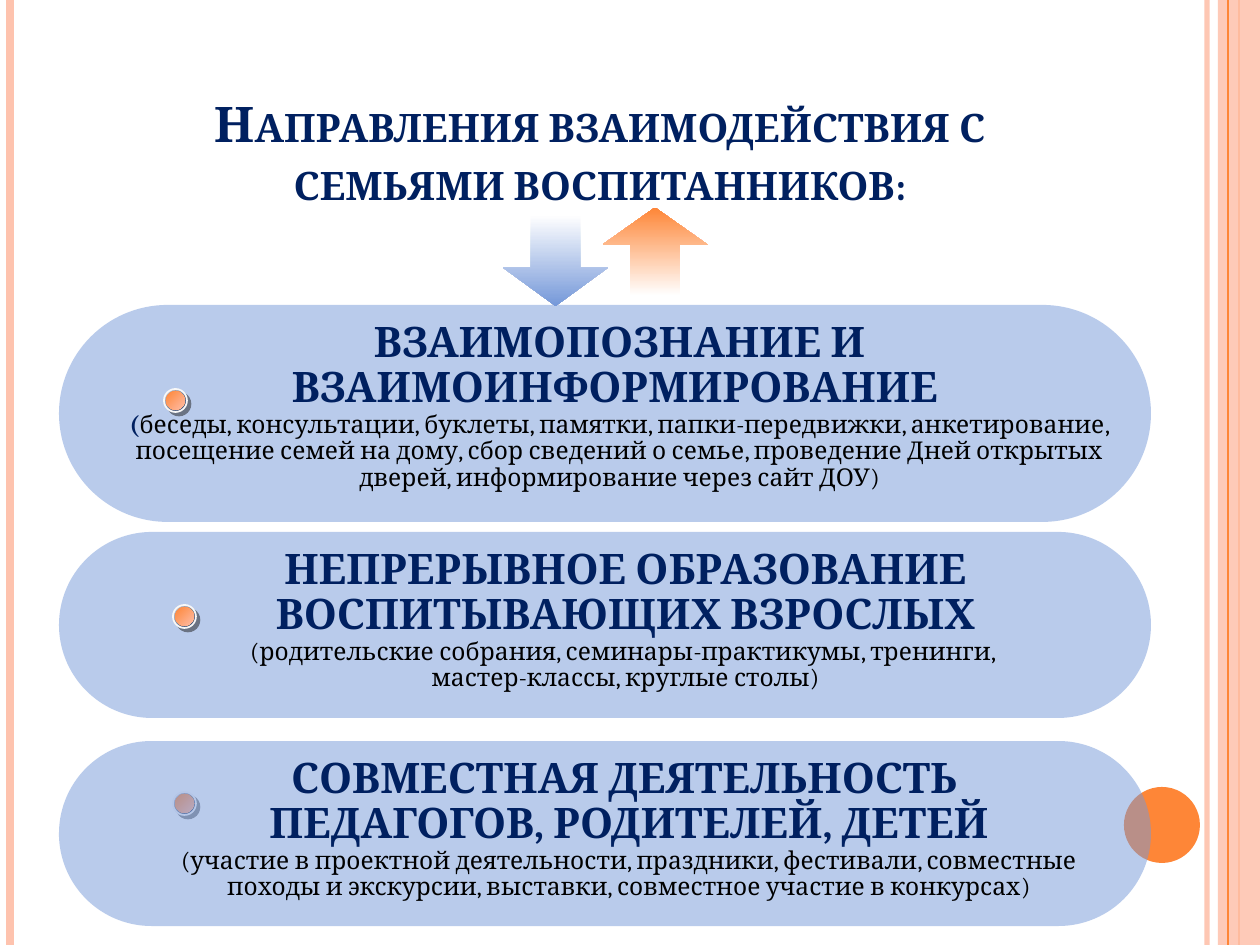
from lxml.etree import SubElement
from pptx import Presentation
from pptx.dml.color import RGBColor
from pptx.enum.shapes import MSO_CONNECTOR, MSO_SHAPE
from pptx.enum.text import MSO_ANCHOR, PP_ALIGN
from pptx.oxml.ns import qn
from pptx.util import Pt

SCALE = 914400 / 126
WIDTH, HEIGHT = 1260, 945
FONT = "Cambria"
NAVY, BLACK, BLUE, ORANGE, PEACH = "002060", "000000", "7598D9", "FE8637", "FEC3AE"

PANELS = [
    {"box": (59, 305, 1092, 217), "wording": (39, 10, 1043, 184), "bead": (105, 84), "bead_behind": False,
     "paragraphs": [
         [("ВЗАИМОПОЗНАНИЕ И ВЗАИМОИНФОРМИРОВАНИЕ ", 24, NAVY, True)],
         [("(", 14, NAVY, True),
          ("беседы, консультации, буклеты, памятки, папки-передвижки, анкетирование, "
           "посещение семей на дому, сбор сведений о семье, проведение Дней открытых дверей, "
           "информирование через сайт ДОУ)", 14, BLACK, False)]]},
    {"box": (59, 532, 1092, 186), "wording": (109, 10, 915, 158), "bead": (114, 73), "bead_behind": False,
     "paragraphs": [
         [("НЕПРЕРЫВНОЕ ОБРАЗОВАНИЕ ВОСПИТЫВАЮЩИХ ВЗРОСЛЫХ", 24, NAVY, True)],
         [("(родительские собрания, семинары-практикумы, тренинги, ", 14, BLACK, False)],
         [("мастер-классы, круглые столы)", 14, BLACK, False)]]},
    {"box": (59, 741, 1092, 185), "wording": (78, 10, 984, 158), "bead": (114, 51), "bead_behind": True,
     "paragraphs": [
         [("СОВМЕСТНАЯ ДЕЯТЕЛЬНОСТЬ ", 24, NAVY, True)],
         [("ПЕДАГОГОВ, РОДИТЕЛЕЙ, ДЕТЕЙ", 24, NAVY, True)],
         [("(участие в проектной деятельности, праздники, фестивали, совместные походы "
           "и экскурсии, выставки, совместное участие в конкурсах)", 14, BLACK, False)]]},
]


def px(*lengths):
    """Turn pixel lengths into EMU."""
    return [round(length * SCALE) for length in lengths]


def paint(color_format, value):
    """Set a colour from a hex string."""
    color_format.rgb = RGBColor.from_string(value)


def set_alpha(shape, percent):
    """Give every colour of a shape the same opacity."""
    for color in list(shape._element.spPr.iter(qn("a:srgbClr"))):
        SubElement(color, qn("a:alpha"), val=str(percent * 1000))


def add_solid(shapes, preset, box, value):
    """Add a plain filled shape without outline or shadow."""
    shape = shapes.add_shape(preset, *px(*box))
    shape.shadow.inherit = False
    shape.fill.solid()
    paint(shape.fill.fore_color, value)
    shape.line.fill.background()
    return shape


def add_gradient(shapes, preset, box, values, angle):
    """Add a shape with a two-colour linear gradient."""
    shape = add_solid(shapes, preset, box, values[0])
    shape.fill.gradient()
    shape.fill.gradient_angle = angle
    for stop, value, position in zip(shape.fill.gradient_stops, values, (0, 1)):
        paint(stop.color, value)
        stop.position = position
    return shape


def add_rule(shapes, x, value, points):
    """Add a full-height vertical line."""
    rule = shapes.add_connector(MSO_CONNECTOR.STRAIGHT, *px(x, 0, x, HEIGHT))
    paint(rule.line.color, value)
    rule.line.width = Pt(points)
    SubElement(rule._element.spPr, qn("a:effectLst"))
    return rule


def add_wording(shapes, box, paragraphs, spacing=None, anchor=MSO_ANCHOR.TOP):
    """Add centred paragraphs made of styled runs."""
    frame = shapes.add_textbox(*px(*box)).text_frame
    frame.word_wrap = True
    frame.vertical_anchor = anchor
    for index, parts in enumerate(paragraphs):
        paragraph = frame.paragraphs[0] if index == 0 else frame.add_paragraph()
        paragraph.alignment = PP_ALIGN.CENTER
        paragraph.line_spacing = spacing
        for text, size, value, bold in parts:
            run = paragraph.add_run()
            run.text = text
            run.font.name, run.font.size, run.font.bold = FONT, Pt(size), bold
            paint(run.font.color, value)
    return frame


def add_frame(shapes, left, right):
    """Draw the side stripes and the corner disc between two edges."""
    set_alpha(add_rule(shapes, right - 53, PEACH, 3), 93)
    add_rule(shapes, left + 10, PEACH, 4.5)
    add_rule(shapes, right - 21, ORANGE, 1.5)
    set_alpha(add_solid(shapes, MSO_SHAPE.RECTANGLE, (right - 42, 0, 42, HEIGHT), PEACH), 87)
    add_rule(shapes, right - 32, ORANGE, 0.75)
    add_solid(shapes, MSO_SHAPE.OVAL, (right - 136, 787, 76, 76), ORANGE)


def add_title(shapes, box):
    """Write the heading in small capitals."""
    heading = [("Направления взаимодействия с семьями воспитанников:", 28, NAVY, True)]
    frame = add_wording(shapes, box, [heading], anchor=MSO_ANCHOR.BOTTOM)
    frame.paragraphs[0].runs[0]._r.get_or_add_rPr().set("cap", "small")


def add_arrow(shapes, box, value, rotation):
    """Add a block arrow that fades in from white towards its head."""
    arrow = add_gradient(shapes, MSO_SHAPE.RIGHT_ARROW, box, ("FFFFFF", value), 0)
    arrow.adjustments[0], arrow.adjustments[1] = 0.47, 0.42
    arrow.rotation = rotation


def add_bead(shapes, left, top):
    """Add a glossy bullet: a shadowed rim with an orange core."""
    group = shapes.add_group_shape().shapes
    rim = add_gradient(group, MSO_SHAPE.OVAL, (left, top, 23, 23), ("DDDDE1", "223864"), 315)
    paint(rim.line.color, "F8F8F8")
    rim.line.width = Pt(1)
    effects = rim._element.spPr.find(qn("a:effectLst"))
    shadow = SubElement(effects, qn("a:outerShdw"), dist=str(Pt(2.8)), dir="2700000", algn="ctr", rotWithShape="0")
    shade = SubElement(shadow, qn("a:srgbClr"), val="1C1C1C")
    SubElement(shade, qn("a:alpha"), val="50000")
    add_gradient(group, MSO_SHAPE.OVAL, (left + 2, top + 2, 19, 19), (ORANGE, "FEBEA8"), 315)


def add_panel(shapes, box, wording, bead, bead_behind, paragraphs):
    """Build one direction: translucent pill, bead and wording."""
    left, top = box[:2]
    bead_place = (left + bead[0], top + bead[1])
    if bead_behind:
        add_bead(shapes, *bead_place)
    pill = add_solid(shapes, MSO_SHAPE.ROUNDED_RECTANGLE, box, BLUE)
    pill.adjustments[0] = 0.5
    set_alpha(pill, 50)
    add_wording(shapes, (left + wording[0], top + wording[1], *wording[2:]), paragraphs, 0.9)
    if not bead_behind:
        add_bead(shapes, *bead_place)


def main():
    """Build the slide and save it."""
    presentation = Presentation()
    presentation.slide_width, presentation.slide_height = px(WIDTH, HEIGHT)
    shapes = presentation.slides.add_slide(presentation.slide_layouts[6]).shapes
    add_frame(shapes, 0, WIDTH)
    add_title(shapes, (108, 59, 984, 158))
    add_arrow(shapes, (510, 208, 91, 105), BLUE, 90)
    add_arrow(shapes, (611, 199, 88, 105), ORANGE, 270)
    for panel in PANELS:
        add_panel(shapes, **panel)
    presentation.save("out.pptx")


if __name__ == "__main__":
    main()
